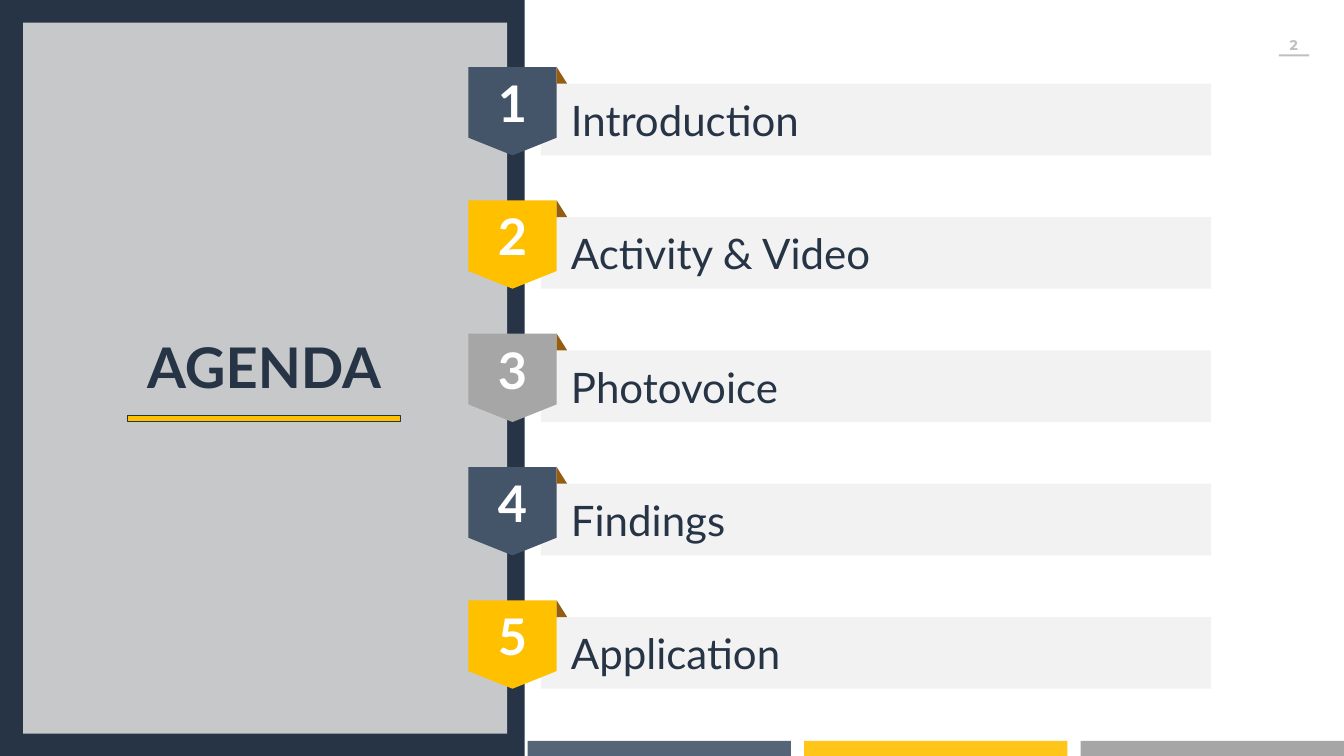
from lxml.etree import SubElement
from pptx import Presentation
from pptx.dml.color import RGBColor
from pptx.enum.shapes import MSO_SHAPE
from pptx.enum.text import MSO_ANCHOR, PP_ALIGN
from pptx.oxml.ns import qn
from pptx.util import Cm, Pt

NAVY = RGBColor(0x26, 0x34, 0x45)
SLATE = RGBColor(0x44, 0x54, 0x69)
GOLD = RGBColor(0xFF, 0xC0, 0x00)
GRAY = RGBColor(0xA6, 0xA6, 0xA6)
SILVER = RGBColor(0xBF, 0xBF, 0xBF)
PANEL = RGBColor(0xD9, 0xD9, 0xD9)
BAR = RGBColor(0xF2, 0xF2, 0xF2)
BROWN = RGBColor(0x94, 0x5D, 0x0F)
WHITE = RGBColor(0xFF, 0xFF, 0xFF)

TITLE = "AGENDA"
PAGE = "2"
ITEMS = ["Introduction", "Activity & Video", "Photovoice", "Findings", "Application"]
COLORS = [SLATE, GOLD, GRAY]
FOOTER = [(SLATE, 90), (GOLD, 90), (GRAY, 100)]

BADGE_LEFT, BADGE_TOP, BADGE_SIZE, ITEM_STEP = 23.6, 3.38, 4.45, 6.72
BAR_LEFT, BAR_WIDTH, BAR_HEIGHT = 27.25, 33.78, 3.61
FOLD_WIDTH = 0.53
FOOTER_LEFT, FOOTER_WIDTH, FOOTER_HEIGHT, FOOTER_STEP = 26.59, 13.26, 0.76, 13.93
SLIDE_WIDTH, SLIDE_HEIGHT = 67.72, 38.1


def add_block(s, kind, left, top, width, height, color, alpha=100):
    sp = s.shapes.add_shape(kind, Cm(left), Cm(top), Cm(width), Cm(height))
    sp.shadow.inherit = False
    sp.fill.solid()
    sp.fill.fore_color.rgb = color
    sp.line.fill.background()
    if alpha < 100:
        clr = sp.element.spPr.find(qn("a:solidFill"))[0]
        SubElement(clr, qn("a:alpha")).set("val", str(alpha * 1000))
    return sp


def write(sp, text, size, color, font="Lato", bold=False, align=PP_ALIGN.CENTER,
          anchor=MSO_ANCHOR.MIDDLE, margins=(0.25, 0.13, 0.25, 0.13)):
    tf = sp.text_frame
    tf.word_wrap = True
    tf.vertical_anchor = anchor
    tf.margin_left, tf.margin_top, tf.margin_right, tf.margin_bottom = map(Cm, margins)
    p = tf.paragraphs[0]
    p.alignment = align
    p.line_spacing = 1.0
    p.space_before = Pt(0)
    r = p.add_run()
    r.text = text
    r.font.name = font
    r.font.size = Pt(size)
    r.font.bold = bold
    r.font.color.rgb = color


def add_item(s, number, text, color):
    top = BADGE_TOP + (number - 1) * ITEM_STEP
    fold_height = BADGE_SIZE - BAR_HEIGHT
    bar = add_block(s, MSO_SHAPE.RECTANGLE, BAR_LEFT, top + fold_height,
                    BAR_WIDTH, BAR_HEIGHT, BAR)
    write(bar, text, 60, NAVY, align=PP_ALIGN.LEFT, margins=(1.52, 0, 0, 0))
    badge = add_block(s, MSO_SHAPE.FLOWCHART_OFFPAGE_CONNECTOR, BADGE_LEFT, top,
                      BADGE_SIZE, BADGE_SIZE, color)
    write(badge, str(number), 72, WHITE, bold=True)
    add_block(s, MSO_SHAPE.RIGHT_TRIANGLE, BADGE_LEFT + BADGE_SIZE, top,
              FOLD_WIDTH, fold_height, BROWN)


def main():
    prs = Presentation()
    prs.slide_width, prs.slide_height = Cm(SLIDE_WIDTH), Cm(SLIDE_HEIGHT)
    s = prs.slides.add_slide(prs.slide_layouts[5])

    page = s.shapes.add_textbox(Cm(64.0), Cm(1.57), Cm(2.39), Cm(1.37))
    write(page, PAGE, 20, SILVER, font="Montserrat", bold=True,
          anchor=MSO_ANCHOR.TOP, margins=(0.51, 0.25, 0.51, 0.25))
    add_block(s, MSO_SHAPE.RECTANGLE, 64.44, 2.74, 1.52, 0.1, SILVER)

    for i, (color, alpha) in enumerate(FOOTER):
        add_block(s, MSO_SHAPE.RECTANGLE, FOOTER_LEFT + i * FOOTER_STEP,
                  SLIDE_HEIGHT - FOOTER_HEIGHT, FOOTER_WIDTH, FOOTER_HEIGHT, color, alpha)

    add_block(s, MSO_SHAPE.RECTANGLE, 0, 0, 26.44, SLIDE_HEIGHT, NAVY)
    add_block(s, MSO_SHAPE.RECTANGLE, 1.17, 1.14, 24.38, 35.84, PANEL, 90)

    for i, text in enumerate(ITEMS):
        add_item(s, i + 1, text, COLORS[i % len(COLORS)])

    rule = add_block(s, MSO_SHAPE.RECTANGLE, 6.4, 20.93, 13.77, 0.33, GOLD)
    rule.line.color.rgb = NAVY
    rule.line.width = Pt(1)

    title = s.shapes.title
    title.left, title.top, title.width, title.height = Cm(4.83), Cm(16.61), Cm(16.97), Cm(3.68)
    write(title, TITLE, 80, NAVY, bold=True, anchor=MSO_ANCHOR.TOP)
    title.element.getparent().append(title.element)

    prs.save("out.pptx")


if __name__ == "__main__":
    main()
